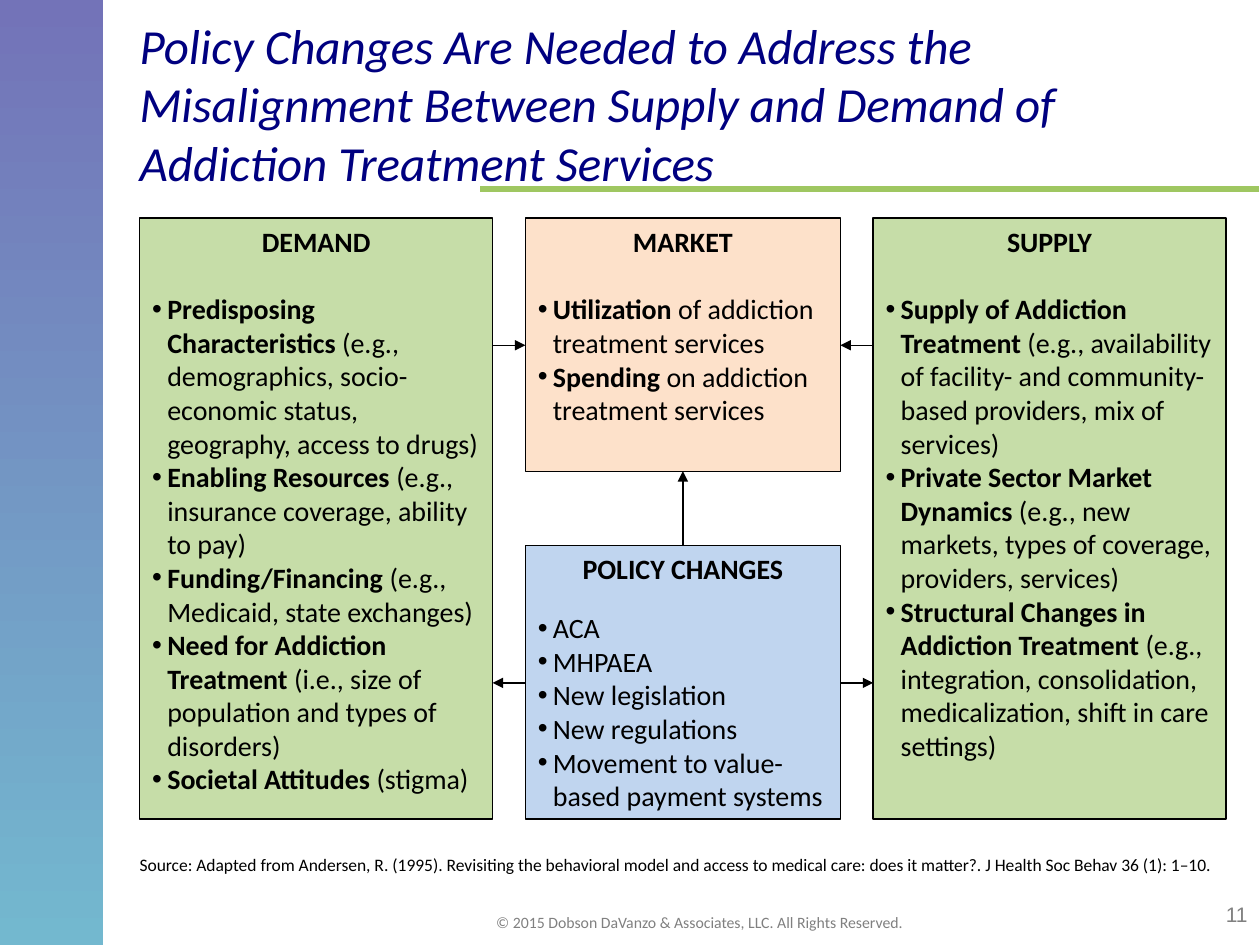
from lxml import etree
from pptx import Presentation
from pptx.dml.color import RGBColor
from pptx.enum.shapes import MSO_CONNECTOR as Connector, MSO_SHAPE as Shape
from pptx.enum.text import MSO_ANCHOR as Anchor, PP_ALIGN as Align
from pptx.oxml.ns import qn
from pptx.util import Inches, Pt

WIDTH, HEIGHT = 10, 7.5

# Grid: three columns with equal gutters between a top and a bottom edge
GUTTER = 0.26
WIDTHS = [2.8, 2.5, 2.8]
LEFTS = [1.11 + sum(WIDTHS[:i]) + i * GUTTER for i in range(3)]
TOP, BOTTOM = 1.73, 6.5
MARKET_END, POLICY_START = 3.74, 4.33
UPPER_ARROWS, LOWER_ARROWS = 2.74, 5.42

GREEN, PEACH, BLUE = "C6DDA8", "FDE1CA", "C0D5EF"
NAVY, GREY, BLACK, LIME = "000080", "808080", "000000", "9FC761"

# Each panel: column, top, bottom, fill, heading, gap in points, (bold, plain) items
PANELS = [
    (1, TOP, MARKET_END, PEACH, "MARKET", 19.5, [
        ("Utilization ", "of addiction treatment services"),
        ("Spending ", "on addiction treatment services"),
    ]),
    (1, POLICY_START, BOTTOM, BLUE, "POLICY CHANGES", 14.6, [
        ("", "ACA"),
        ("", "MHPAEA"),
        ("", "New legislation"),
        ("", "New regulations"),
        ("", "Movement to value-based payment systems"),
    ]),
    (2, TOP, BOTTOM, GREEN, "SUPPLY", 19.5, [
        ("Supply of Addiction Treatment ",
         "(e.g., availability of facility- and community-based providers, mix of services)"),
        ("Private Sector Market Dynamics ",
         "(e.g., new markets, types of coverage, providers, services)"),
        ("Structural Changes in Addiction Treatment ",
         "(e.g., integration, consolidation, medicalization, shift in care settings)"),
    ]),
    (0, TOP, BOTTOM, GREEN, "DEMAND", 19.5, [
        ("Predisposing Characteristics ",
         "(e.g., demographics, socio-economic status, geography, access to drugs)"),
        ("Enabling Resources ", "(e.g., insurance coverage, ability to pay)"),
        ("Funding/Financing", " (e.g., Medicaid, state exchanges)"),
        ("Need for Addiction Treatment ",
         "(i.e., size of population and types of disorders)"),
        ("Societal Attitudes ", "(stigma)"),
    ]),
]


def color(value):
    return RGBColor.from_string(value)


def apply(target, formats):
    for name, value in formats.items():
        setattr(target, name, value)


def add_span(para, text, size, ink=BLACK, **formats):
    span = para.add_run()
    span.text = text
    apply(span.font, {"name": "Calibri", "size": Pt(size), **formats})
    span.font.color.rgb = color(ink)


def add_label(page, place, text, size, ink=BLACK, align=Align.LEFT,
              anchor=Anchor.TOP, **formats):
    box = page.shapes.add_textbox(*map(Inches, place))
    apply(box.text_frame, {"word_wrap": True, "vertical_anchor": anchor})
    para = box.text_frame.paragraphs[0]
    para.alignment = align
    add_span(para, text, size, ink, **formats)
    return box


def add_bullet(para):
    props = para._p.get_or_add_pPr()
    props.set("marL", str(Inches(0.12)))
    props.set("indent", str(-Inches(0.12)))
    etree.SubElement(props, qn("a:buFont")).set("typeface", "Arial")
    etree.SubElement(props, qn("a:buChar")).set("char", "•")


def add_rectangle(page, *place):
    box = page.shapes.add_shape(Shape.RECTANGLE, *map(Inches, place))
    box.shadow.inherit = False
    return box


def add_panel(page, column, top, bottom, fill, heading, gap, items):
    box = add_rectangle(page, LEFTS[column], top, WIDTHS[column], bottom - top)
    box.fill.solid()
    box.fill.fore_color.rgb = color(fill)
    box.line.color.rgb = color(BLACK)
    box.line.width = Pt(0.75)
    frame = box.text_frame
    apply(frame, {"word_wrap": True, "vertical_anchor": Anchor.TOP})
    title = frame.paragraphs[0]
    title.alignment = Align.CENTER
    add_span(title, heading, 16, bold=True)
    for index, (strong, plain) in enumerate(items):
        para = frame.add_paragraph()
        apply(para, {"alignment": Align.LEFT,
                     "space_before": Pt(0 if index else gap)})
        add_bullet(para)
        if strong:
            add_span(para, strong, 16, bold=True)
        add_span(para, plain, 16, bold=False)


def add_line(page, start, end, ink=BLACK, width=0.75, arrow=True):
    line = page.shapes.add_connector(
        Connector.STRAIGHT, *map(Inches, (*start, *end)))
    line.line.color.rgb = color(ink)
    line.line.width = Pt(width)
    if arrow:
        outline = line.line._get_or_add_ln()
        etree.SubElement(outline, qn("a:tailEnd")).set("type", "triangle")
    etree.SubElement(line._element.spPr, qn("a:effectLst"))


def add_side_band(page):
    band = add_rectangle(page, 0, 0, 0.82, HEIGHT)
    band.fill.gradient()
    band.fill.gradient_angle = 270
    for stop, value in zip(band.fill.gradient_stops, ("7373B8", "73B8CF")):
        stop.color.rgb = color(value)
    band.line.fill.background()


def add_arrows(page):
    demand_edge = LEFTS[0] + WIDTHS[0]
    middle_left, middle_right = LEFTS[1], LEFTS[1] + WIDTHS[1]
    supply_edge = LEFTS[2]
    center = (middle_left + middle_right) / 2
    add_line(page, (center, POLICY_START), (center, MARKET_END))
    for start, end, height in [
        (middle_right, supply_edge, LOWER_ARROWS),
        (middle_left, demand_edge, LOWER_ARROWS),
        (supply_edge, middle_right, UPPER_ARROWS),
        (demand_edge, middle_left, UPPER_ARROWS),
    ]:
        add_line(page, (start, height), (end, height))


def main():
    deck = Presentation()
    apply(deck, {"slide_width": Inches(WIDTH), "slide_height": Inches(HEIGHT)})
    page = deck.slides.add_slide(deck.slide_layouts[6])

    # Frame of the page
    add_line(page, (3.81, 1.5), (9.99, 1.5), LIME, 3, arrow=False)
    add_side_band(page)
    add_label(page, (8.92, 7.11, 1.08, 0.3), "11", 12, GREY, Align.RIGHT,
              name="Arial")
    footer = add_label(
        page, (3.41, 7.2, 4.28, 0.21),
        "© 2015 Dobson DaVanzo & Associates, LLC. All Rights Reserved.",
        9, GREY, Align.CENTER)
    apply(footer.text_frame, {"margin_top": Inches(0.04),
                              "margin_bottom": Inches(0.04)})

    # Title
    add_label(page, (1.01, 0.08, 8.59, 1.48),
              "Policy Changes Are Needed to Address the Misalignment Between "
              "Supply and Demand of Addiction Treatment Services",
              28, NAVY, anchor=Anchor.MIDDLE, italic=True)

    # Diagram
    for panel in PANELS:
        add_panel(page, *panel)
    add_arrows(page)

    # Source
    add_label(page, (1.01, 6.73, 8.96, 0.27),
              "Source: Adapted from Andersen, R. (1995). Revisiting the "
              "behavioral model and access to medical care: does it matter?. "
              "J Health Soc Behav 36 (1): 1–10.", 10)

    deck.save("out.pptx")


if __name__ == "__main__":
    main()
